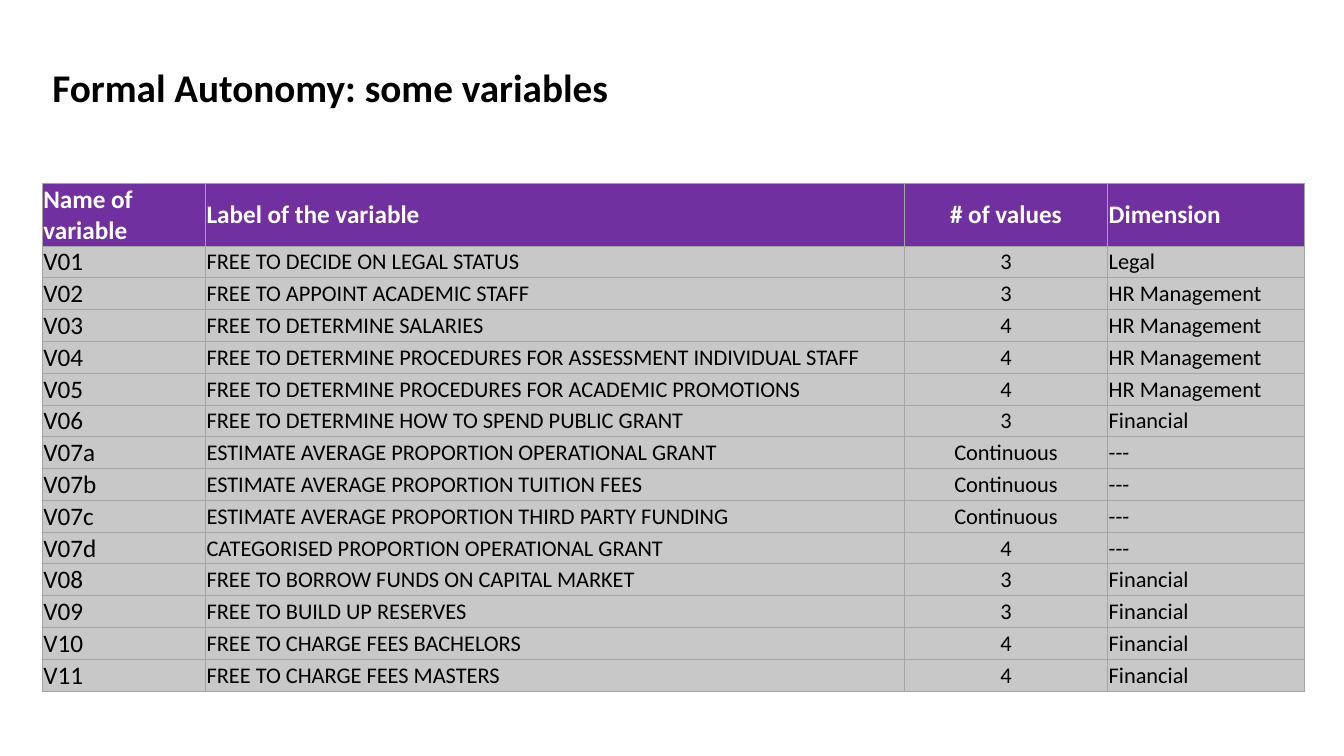
from lxml.etree import SubElement
from pptx import Presentation
from pptx.dml.color import RGBColor
from pptx.enum.text import MSO_ANCHOR as Anchor, PP_ALIGN as Align
from pptx.oxml.ns import qn
from pptx.util import Pt

TITLE = "Formal Autonomy: some variables"
HEADER = ("Name of variable", "Label of the variable", "# of values", "Dimension")
VARIABLES = [
    ("V01", "FREE TO DECIDE ON LEGAL STATUS", "3", "Legal"),
    ("V02", "FREE TO APPOINT ACADEMIC STAFF", "3", "HR Management"),
    ("V03", "FREE TO DETERMINE SALARIES", "4", "HR Management"),
    ("V04", "FREE TO DETERMINE PROCEDURES FOR ASSESSMENT INDIVIDUAL STAFF", "4", "HR Management"),
    ("V05", "FREE TO DETERMINE PROCEDURES FOR ACADEMIC PROMOTIONS", "4", "HR Management"),
    ("V06", "FREE TO DETERMINE HOW TO SPEND PUBLIC GRANT", "3", "Financial"),
    ("V07a", "ESTIMATE AVERAGE PROPORTION OPERATIONAL GRANT", "Continuous", "---"),
    ("V07b", "ESTIMATE AVERAGE PROPORTION TUITION FEES", "Continuous", "---"),
    ("V07c", "ESTIMATE AVERAGE PROPORTION THIRD PARTY FUNDING", "Continuous", "---"),
    ("V07d", "CATEGORISED PROPORTION OPERATIONAL GRANT", "4", "---"),
    ("V08", "FREE TO BORROW FUNDS ON CAPITAL MARKET", "3", "Financial"),
    ("V09", "FREE TO BUILD UP RESERVES", "3", "Financial"),
    ("V10", "FREE TO CHARGE FEES BACHELORS", "4", "Financial"),
    ("V11", "FREE TO CHARGE FEES MASTERS", "4", "Financial"),
]
FONT = "Calibri"
BLACK, WHITE, PURPLE, GREY, BORDER = "000000", "FFFFFF", "7030A0", "C8C8C8", "A5A5A5"
LEFT, TABLE_TOP = 30.25, 131
COLUMN_WIDTHS = (116.64, 499, 145.4, 140.4)
HEADER_HEIGHT, ROW_HEIGHT = 44.6, 22.57
HEADER_ALIGNS = (Align.LEFT, Align.LEFT, Align.CENTER, Align.LEFT)
BODY_ALIGNS = (Align.LEFT, Align.JUSTIFY, Align.CENTER, Align.LEFT)
BODY_SIZES = (18, 16, 16, 16)


def color(value):
    return RGBColor.from_string(value)


def style_text(frame, size, ink, bold, align):
    para = frame.paragraphs[0]
    para.alignment = align
    font = para.runs[0].font
    font.name, font.size, font.bold = FONT, Pt(size), bold
    font.color.rgb = color(ink)


def add_borders(cell):
    """Draw the four cell edges; they must precede the fill in the XML."""
    properties = cell._tc.get_or_add_tcPr()
    for edge in ("a:lnL", "a:lnR", "a:lnT", "a:lnB"):
        line = SubElement(properties, qn(edge), w=str(Pt(0.5)))
        fill = SubElement(line, qn("a:solidFill"))
        SubElement(fill, qn("a:srgbClr"), val=BORDER)


def fill_cell(cell, text, fill, size, ink, bold, align):
    cell.margin_left = cell.margin_top = cell.margin_right = Pt(0.72)
    cell.margin_bottom = 0
    cell.vertical_anchor = Anchor.MIDDLE
    cell.text_frame.text = text
    style_text(cell.text_frame, size, ink, bold, align)
    add_borders(cell)
    cell.fill.solid()
    cell.fill.fore_color.rgb = color(fill)


def add_title(page):
    title = page.shapes.title
    title.left, title.top, title.width, title.height = Pt(LEFT), Pt(41.75), Pt(514.8), Pt(41)
    title.text_frame.text = TITLE
    title.text_frame.vertical_anchor = Anchor.TOP
    style_text(title.text_frame, 28, BLACK, True, Align.LEFT)


def add_variables(page):
    height = HEADER_HEIGHT + ROW_HEIGHT * len(VARIABLES)
    table = page.shapes.add_table(
        len(VARIABLES) + 1, len(HEADER),
        Pt(LEFT), Pt(TABLE_TOP), Pt(sum(COLUMN_WIDTHS)), Pt(height)).table
    table.horz_banding = False
    for column, width in zip(table.columns, COLUMN_WIDTHS):
        column.width = Pt(width)
    for row_index, texts in enumerate([HEADER] + VARIABLES):
        is_header = row_index == 0
        table.rows[row_index].height = Pt(HEADER_HEIGHT if is_header else ROW_HEIGHT)
        for index, text in enumerate(texts):
            cell = table.cell(row_index, index)
            if is_header:
                fill_cell(cell, text, PURPLE, 18, WHITE, True, HEADER_ALIGNS[index])
            else:
                fill_cell(cell, text, GREY, BODY_SIZES[index], BLACK, False, BODY_ALIGNS[index])


def main():
    deck = Presentation()
    deck.slide_width, deck.slide_height = Pt(960), Pt(540)
    page = deck.slides.add_slide(deck.slide_layouts[5])
    add_variables(page)
    add_title(page)
    deck.save("out.pptx")


if __name__ == "__main__":
    main()
